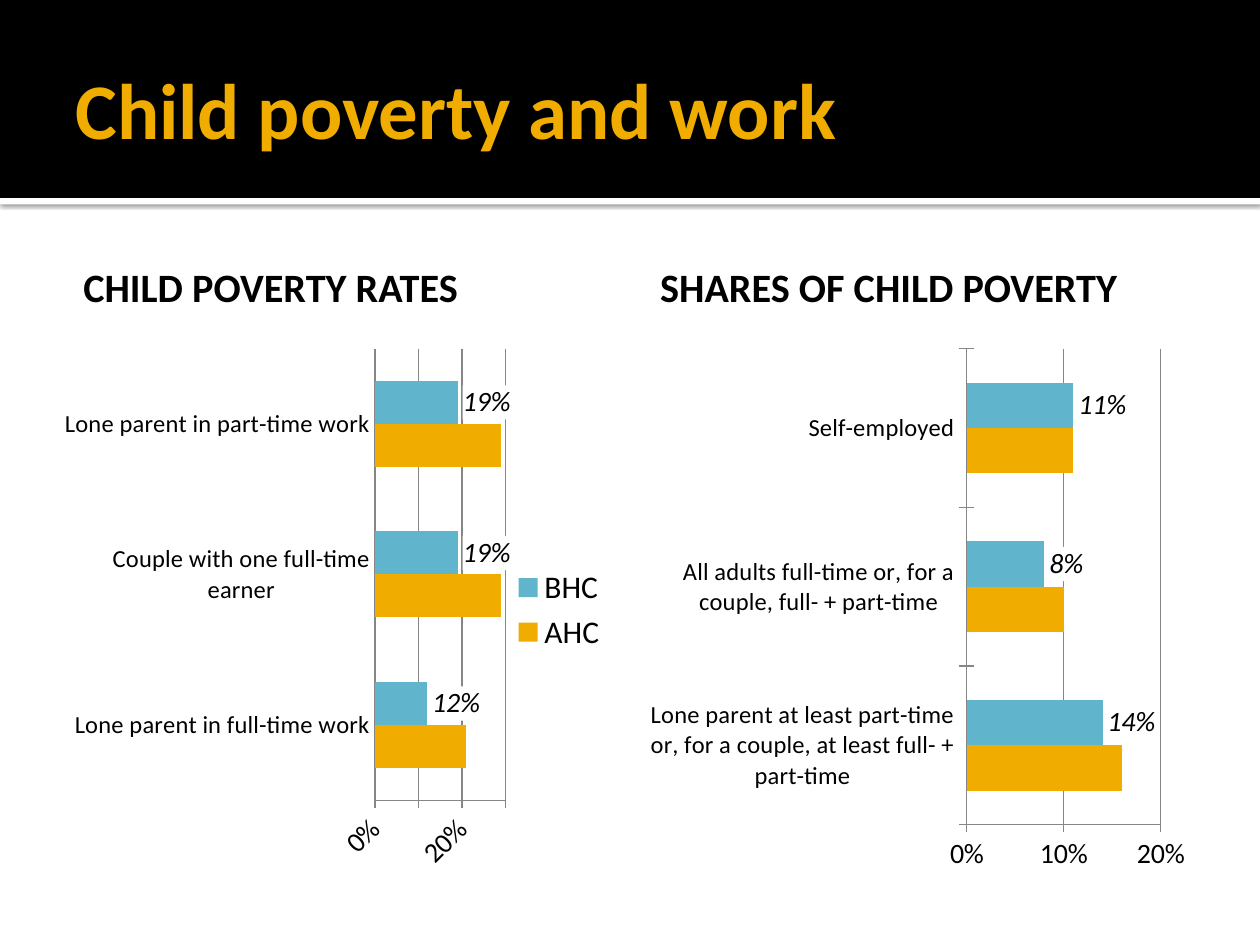
import pptx
import pptx.chart.data
import pptx.dml.color
import pptx.enum.chart
import pptx.enum.shapes
import pptx.enum.text
import pptx.oxml
import pptx.oxml.ns
import pptx.util

Cm, Pt = pptx.util.Cm, pptx.util.Pt
RGBColor = pptx.dml.color.RGBColor
TickMark = pptx.enum.chart.XL_TICK_MARK

BLACK = RGBColor(0x00, 0x00, 0x00)
WHITE = RGBColor(0xFF, 0xFF, 0xFF)
GOLD = RGBColor(0xF0, 0xAD, 0x00)
BLUE = RGBColor(0x60, 0xB5, 0xCC)
GREY = RGBColor(0x86, 0x86, 0x86)
FONT = "Calibri"

TITLE = "Child poverty and work"
PANELS = [
    {
        "heading": "CHILD POVERTY RATES",
        "categories": ["Lone parent in full-time work",
                       "Couple with one full-time earner",
                       "Lone parent in part-time work"],
        "series": [("AHC", (0.21, 0.29, 0.29)), ("BHC", (0.12, 0.19, 0.19))],
        "maximum": 0.3,
        "category_tick": TickMark.NONE,
        "legend": True,
        "label_rotation": -45,
        "plot": (0.56, 0.02, 0.235, 0.83),
    },
    {
        "heading": "SHARES OF CHILD POVERTY",
        "categories": ["Lone parent at least part-time or, for a couple, "
                       "at least full- + part-time",
                       "All adults full-time or, for a couple, full- + part-time",
                       "Self-employed"],
        "series": [("Series 1", (0.16, 0.1, 0.11)),
                   ("Series 2", (0.14, 0.08, 0.11))],
        "maximum": 0.2,
        "category_tick": TickMark.CROSS,
        "legend": False,
        "label_rotation": 0,
        "plot": (0.587, 0.02, 0.348, 0.875),
    },
]

MARGIN, PANEL_WIDTH, PANEL_STEP = 1.27, 11.23, 11.63
BAND_HEIGHT = 3.99


def xml(markup):
    return pptx.oxml.parse_xml(markup)


def add_band(slide, top, height, color):
    band = slide.shapes.add_shape(pptx.enum.shapes.MSO_SHAPE.RECTANGLE,
                                  0, Cm(top), Cm(25.4), Cm(height))
    band.shadow.inherit = False
    band.fill.solid()
    band.fill.fore_color.rgb = color
    band.line.fill.background()
    return band


def add_drop_shadow(shape):
    effects = shape._element.spPr.find(pptx.oxml.ns.qn("a:effectLst"))
    effects.append(xml(
        f'<a:outerShdw {pptx.oxml.ns.nsdecls("a")} blurRad="{Pt(2.5)}" '
        f'dist="{Pt(0.8)}" dir="5400000" algn="tl" rotWithShape="0">'
        '<a:srgbClr val="000000"><a:alpha val="60000"/></a:srgbClr></a:outerShdw>'))


def add_text(slide, text, box, insets, size, color):
    frame = slide.shapes.add_textbox(*map(Cm, box)).text_frame
    frame.word_wrap = True
    frame.vertical_anchor = pptx.enum.text.MSO_ANCHOR.MIDDLE
    (frame.margin_left, frame.margin_top,
     frame.margin_right, frame.margin_bottom) = map(Cm, insets)
    frame.text = text
    style_font(frame.paragraphs[0].runs[0].font, size, color).bold = True


def style_font(font, size, color=BLACK):
    font.name, font.size = FONT, Pt(size)
    font.color.rgb = color
    return font


def style_line(line):
    line.color.rgb = GREY
    line.width = Pt(0.75)


def place_plot(chart, plot):
    """Fix the inner plot area, given as fractions of the chart."""
    places = "".join(f'<c:{tag} val="{value}"/>'
                     for tag, value in zip("xywh", plot))
    area = chart._chartSpace.chart.plotArea
    for layout in area.findall(pptx.oxml.ns.qn("c:layout")):
        area.remove(layout)
    area.insert(0, xml(
        f'<c:layout {pptx.oxml.ns.nsdecls("c")}><c:manualLayout>'
        '<c:layoutTarget val="inner"/><c:xMode val="edge"/><c:yMode val="edge"/>'
        f'{places}</c:manualLayout></c:layout>'))


def label_bars(series):
    labels = series.data_labels
    labels.show_value = True
    labels.number_format, labels.number_format_is_linked = "0%", False
    labels.position = pptx.enum.chart.XL_LABEL_POSITION.OUTSIDE_END
    style_font(labels.font, 16).italic = True
    text_properties = labels._element.find(pptx.oxml.ns.qn("c:txPr"))
    text_properties.addprevious(xml(
        f'<c:spPr {pptx.oxml.ns.nsdecls("c", "a")}><a:solidFill>'
        f'<a:srgbClr val="{WHITE}"/></a:solidFill></c:spPr>'))


def add_bar_chart(slide, panel, box):
    data = pptx.chart.data.CategoryChartData(number_format="0%")
    data.categories = panel["categories"]
    for name, values in panel["series"]:
        data.add_series(name, values)
    chart = slide.shapes.add_chart(pptx.enum.chart.XL_CHART_TYPE.BAR_CLUSTERED,
                                   *map(Cm, box), data).chart
    style_font(chart.font, 18)
    chart.has_title = False
    place_plot(chart, panel["plot"])

    bars = chart.plots[0]
    bars.vary_by_categories = False
    bars.gap_width = 150
    for series, color in zip(bars.series, (GOLD, BLUE)):
        series.format.fill.solid()
        series.format.fill.fore_color.rgb = color
    label_bars(bars.series[1])

    categories, values = chart.category_axis, chart.value_axis
    for axis, size, tick in ((categories, 14, panel["category_tick"]),
                             (values, 16, TickMark.CROSS)):
        style_font(axis.tick_labels.font, size)
        style_line(axis.format.line)
        axis.major_tick_mark, axis.minor_tick_mark = tick, TickMark.NONE
    values.minimum_scale, values.maximum_scale = 0, panel["maximum"]
    values.major_unit = 0.1
    values.has_major_gridlines = True
    style_line(values.major_gridlines.format.line)
    values.tick_labels.number_format = "0%"
    values.tick_labels.number_format_is_linked = False
    if panel["label_rotation"]:
        body = values._element.find(".//" + pptx.oxml.ns.qn("a:bodyPr"))
        body.set("rot", str(panel["label_rotation"] * 60000))

    chart.has_legend = panel["legend"]
    if panel["legend"]:
        chart.legend.position = pptx.enum.chart.XL_LEGEND_POSITION.RIGHT
        chart.legend.include_in_layout = False
        style_font(chart.legend.font, 18)


def main():
    deck = pptx.Presentation()
    deck.slide_width, deck.slide_height = Cm(25.4), Cm(19.05)
    slide = deck.slides.add_slide(deck.slide_layouts[6])

    add_drop_shadow(add_band(slide, BAND_HEIGHT, 0.13, WHITE))
    add_band(slide, 0, BAND_HEIGHT, BLACK)
    add_text(slide, TITLE, (MARGIN, 0.43, 22.86, 3.48),
             (0.25, 0.13, 0.13, 0.13), 45, GOLD)
    for column, panel in enumerate(PANELS):
        left = MARGIN + column * PANEL_STEP
        add_text(slide, panel["heading"], (left, 4.72, PANEL_WIDTH, 1.98),
                 (0.41, 0.25, 0.25, 0.13), 23, BLACK)
        add_bar_chart(slide, panel, (left, 6.81, PANEL_WIDTH, 10.97))
    deck.save("out.pptx")


if __name__ == "__main__":
    main()
